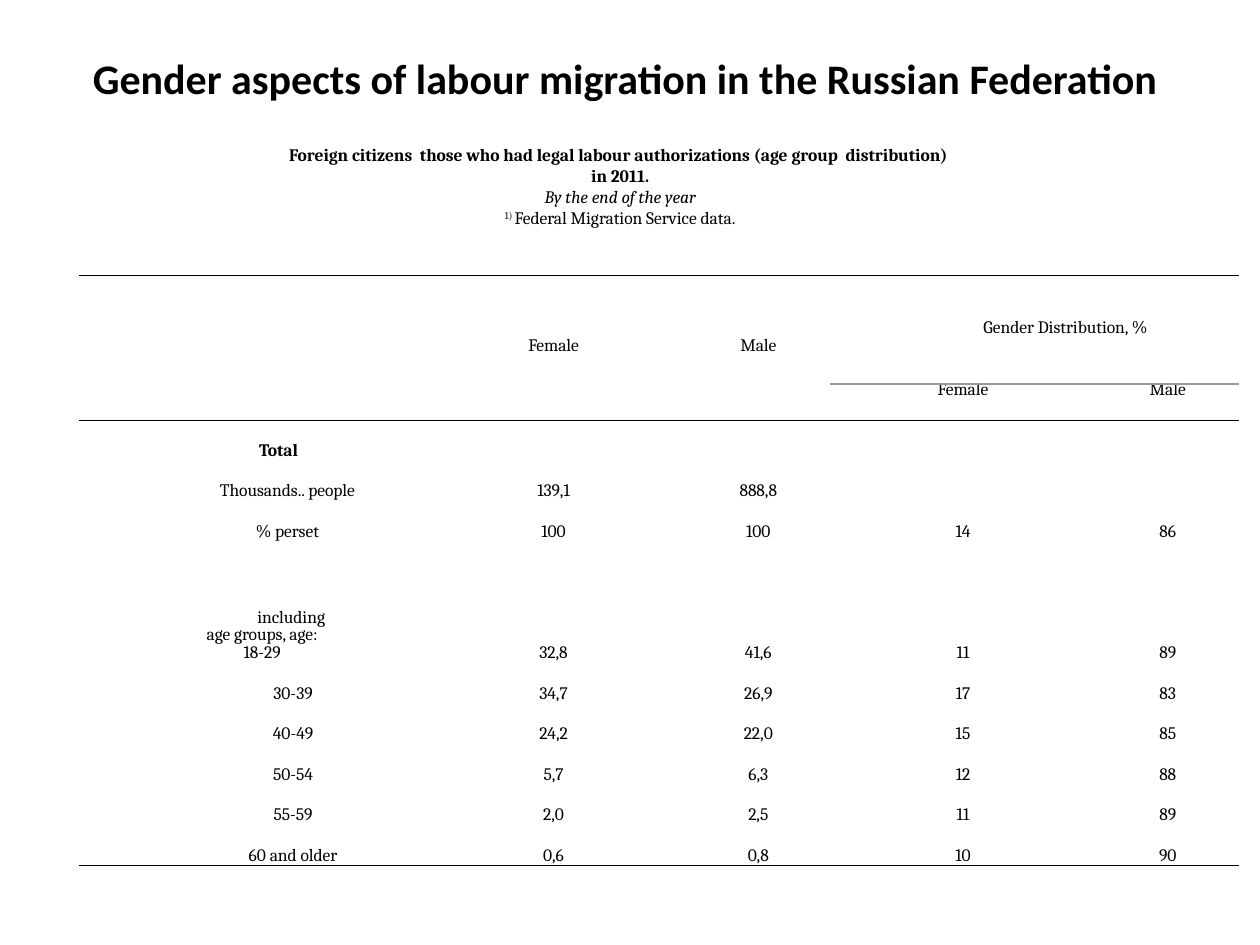
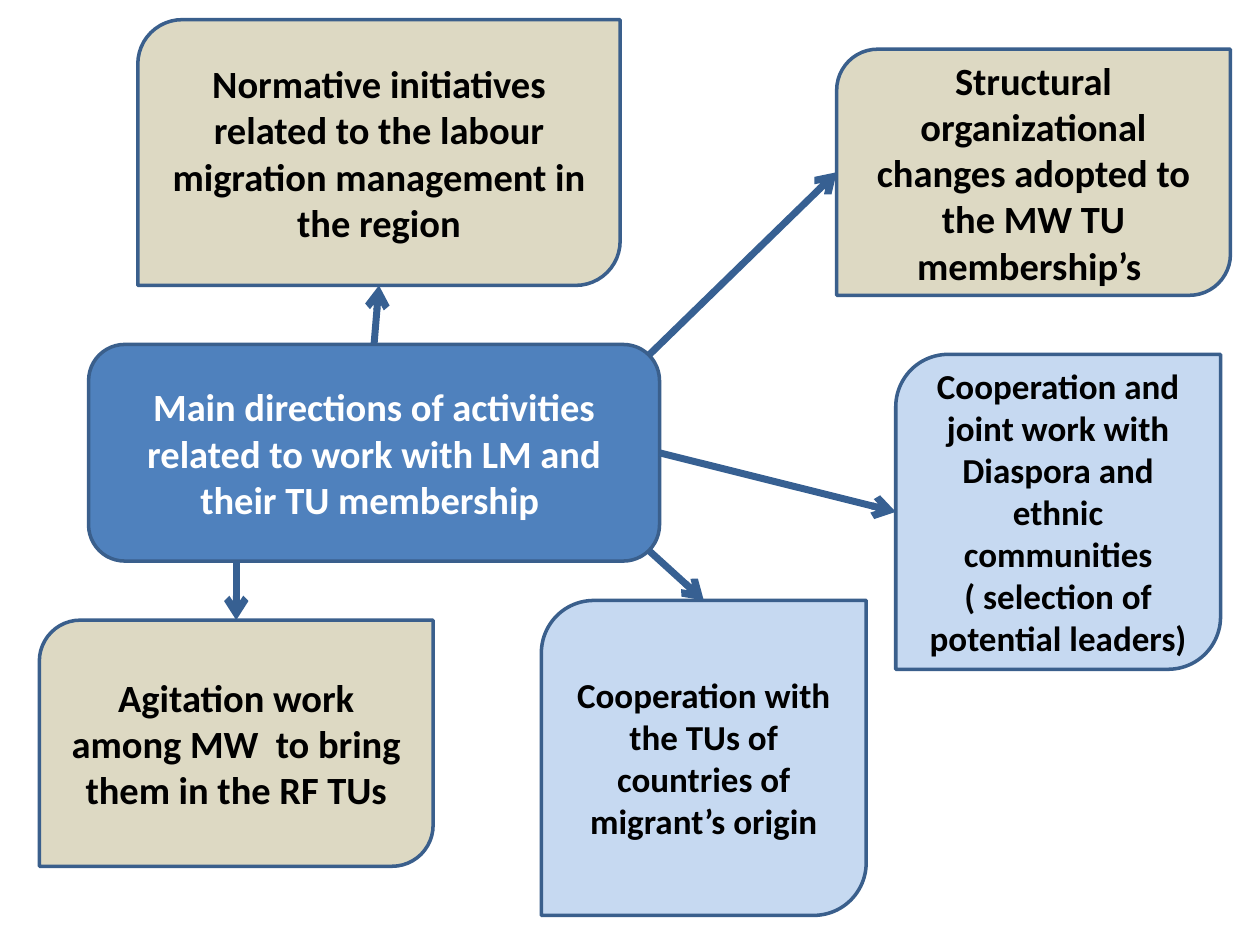
"""Two slides on labour migration: an age table and a map of activities."""
from lxml import etree
from pptx import Presentation
from pptx import util as u
from pptx.dml.color import RGBColor
from pptx.enum import shapes, text
from pptx.oxml.ns import qn

COLORS = {"text": "000000", "white": "FFFFFF", "rule": "000000", "subrule": "999999",
          "main": "4F81BD", "sand": "DDD9C3", "sky": "C6D9F1", "edge": "3A5F8C", "arrow": "376092"}
TITLE = {"name": "Calibri", "size": u.Pt(24), "bold": True}
SMALL = {"name": "Cambria", "size": u.Pt(10), "bold": False, "italic": False}
HEAD = {"line_spacing": u.Pt(9), "space_before": u.Pt(3), "space_after": u.Pt(3)}
BODY = {"line_spacing": u.Pt(10), "space_before": u.Pt(12)}
ANCHOR = text.MSO_ANCHOR

prs = Presentation()
prs.slide_width, prs.slide_height = u.Inches(10), u.Inches(7.5)
unit = prs.slide_width / 128


def grid(*cells):
    """Turn cells of a 128 by 96 grid into lengths."""
    return [u.Emu(round(c * unit)) for c in cells]


def style(p, fmt, color="text", **para):
    """Centre a paragraph and format its runs and breaks."""
    p.alignment = text.PP_ALIGN.CENTER
    for key, value in para.items():
        setattr(p, key, value)
    for r in p.runs:
        for key, value in fmt.items():
            setattr(r.font, key, value)
        r.font.color.rgb = RGBColor.from_string(COLORS[color])
    size = str(int(fmt["size"].pt * 100))
    for br in p._p.findall(qn("a:br")):
        etree.SubElement(br, qn("a:rPr"), sz=size)
    etree.SubElement(p._p, qn("a:endParaRPr"), sz=size)


s = prs.slides.add_slide(prs.slide_layouts[6])
tf = s.shapes.add_textbox(*grid(6.4, 3.84, 115.2, 8.2)).text_frame
tf.word_wrap, tf.vertical_anchor = True, ANCHOR.MIDDLE
tf.text = "Gender aspects of labour migration in the Russian Federation "
style(tf.paragraphs[0], TITLE)

rows = [
    ["", "Female", "Male", "Gender Distribution, %", ""],
    ["", "", "", "Female", "Male"],
    ["Total ", "", "", "", ""],
    ["Thousands.. people", "139,1", "888,8", "", ""],
    ["% perset", "100", "100", "14", "86"],
    ["including \vage groups, age:\v18-29", "32,8", "41,6", "11", "89"],
    ["30-39", "34,7", "26,9", "17", "83"],
    ["40-49", "24,2", "22,0", "15", "85"],
    ["50-54", "5,7", "6,3", "12", "88"],
    ["55-59", "2,0", "2,5", "11", "89"],
    ["60 and older", "0,6", "0,8", "10", "90"],
]
heights = [11, 3.7] + [4.12] * 3 + [12.3] + [4.12] * 5
widths = [34.7] + [20.8] * 4
rules = {0: "rule", 2: "rule", len(rows): "rule"}
frame = s.shapes.add_table(len(rows), 5, *grid(8, 28, sum(widths), sum(heights)))
table = frame.table
table.first_row = table.horz_banding = False
for column, width in zip(table.columns, grid(*widths)):
    column.width = width
for row, height in zip(table.rows, grid(*heights)):
    row.height = height
for c in range(3):
    table.cell(0, c).merge(table.cell(1, c))
table.cell(0, 3).merge(table.cell(0, 4))

for i, row in enumerate(rows):
    for j, value in enumerate(row):
        cell = table.cell(i, j)
        cell.margin_left = cell.margin_right = cell.margin_top = cell.margin_bottom = 0
        cell.vertical_anchor = ANCHOR.BOTTOM if i > 1 else ANCHOR.MIDDLE if i == 0 else ANCHOR.TOP
        p = cell.text_frame.paragraphs[0]
        p.text = value
        style(p, SMALL | {"bold": value == "Total "}, **(BODY if i > 1 else HEAD))
        margin = 0 if j or i < 3 else 0.11 if i < 5 else 0.2
        p._p.get_or_add_pPr().set("marL", str(u.Inches(margin)))
        p._p.get_or_add_pPr().set("indent", str(u.Inches(0.49)))
        tcPr = cell._tc.get_or_add_tcPr()
        for tag, edge in (("L", None), ("R", None), ("T", i), ("B", i + 1)):
            name = "subrule" if edge == 1 and j > 2 else rules.get(edge)
            ln = etree.SubElement(tcPr, qn("a:ln" + tag), w=str(u.Pt(1)))
            fill = etree.SubElement(ln, qn("a:solidFill" if name else "a:noFill"))
            if name:
                etree.SubElement(fill, qn("a:srgbClr"), val=COLORS[name])
        cell.fill.background()

tf = s.shapes.add_textbox(*grid(6, 14, 114, 9.9)).text_frame
tf.word_wrap = True
tf.text = ("Foreign citizens  those who had legal labour authorizations (age group  distribution) "
           "\vin 2011.\nBy the end of the year\n1) ")
caption, date, note = tf.paragraphs
note.add_run().text = "Federal Migration Service data."
for p, extra in ((caption, {"bold": True}), (date, {"italic": True}), (note, {})):
    style(p, SMALL | extra)
note.runs[0]._r.get_or_add_rPr().set("baseline", "30000")

s = prs.slides.add_slide(prs.slide_layouts[6])
boxes = {
    "main": (9, 35, 58, 22, "main", 22,
             "Main directions of activities related to work with LM and their TU membership "),
    "agitation": (4, 63, 40, 25, "sand", 22,
                  "Agitation work among MW  to bring them in the RF TUs"),
    "unions": (55, 61, 33, 32, "sky", 20,
               "Cooperation with the TUs of countries of migrant’s origin"),
    "structure": (85, 5, 40, 25, "sand", 22,
                  "Structural organizational changes adopted to the MW TU membership’s "),
    "diaspora": (91, 36, 33, 32, "sky", 20,
                 "Cooperation and joint work with Diaspora and ethnic communities "
                 "( selection of potential leaders)"),
    "norms": (14, 2, 49, 27, "sand", 22,
              "Normative initiatives related to the labour migration management in the region"),
}
shown = {}
for name, (x, y, w, h, color, size, label) in boxes.items():
    hub = name == "main"
    kind = shapes.MSO_SHAPE.ROUNDED_RECTANGLE if hub else shapes.MSO_SHAPE.ROUND_2_DIAG_RECTANGLE
    sp = shown[name] = s.shapes.add_shape(kind, *grid(x, y, w, h))
    sp.shadow.inherit = False
    sp.fill.solid()
    sp.fill.fore_color.rgb = RGBColor.from_string(COLORS[color])
    sp.line.color.rgb = RGBColor.from_string(COLORS["edge"])
    sp.line.width = u.Pt(2)
    tf = sp.text_frame
    tf.word_wrap, tf.vertical_anchor = True, ANCHOR.MIDDLE
    tf.text = label
    style(tf.paragraphs[0], TITLE | {"size": u.Pt(size)}, "white" if hub else "text")

diagonal_sites = {0: 3, 1: 2, 2: 1, 3: 0}
arrows = [(0, "norms", 2), ((24, 57), "agitation", 0), (3, "diaspora", 1),
          ((66, 56), "unions", 0), ((66, 36), "structure", 1)]
for start, target, side in arrows:
    joined = isinstance(start, int)
    x, y = grid(*((0, 0) if joined else start))
    line = s.shapes.add_connector(shapes.MSO_CONNECTOR.STRAIGHT, x, y, x, y)
    if joined:
        line.begin_connect(shown["main"], start)
    line.end_connect(shown[target], side)
    line._element.find(".//" + qn("a:endCxn")).set("idx", str(diagonal_sites[side]))
    line.line.color.rgb = RGBColor.from_string(COLORS["arrow"])
    line.line.width = u.Pt(4)
    etree.SubElement(line.line._get_or_add_ln(), qn("a:tailEnd"), type="arrow")
    etree.SubElement(line._element.spPr, qn("a:effectLst"))

prs.save("out.pptx")
